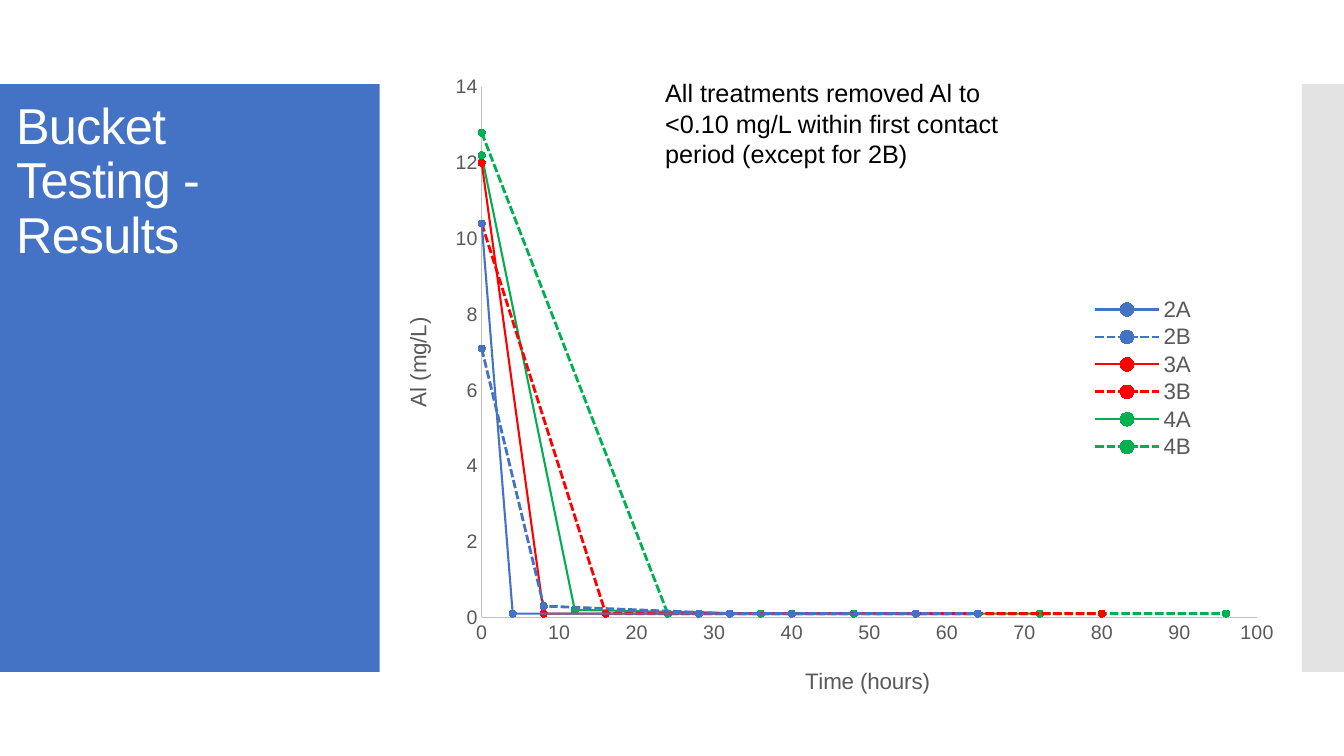
from dataclasses import dataclass

from lxml import etree
from pptx import Presentation, util as u
from pptx.chart.data import XyChartData
from pptx.dml.color import RGBColor
from pptx.enum import chart as ch, dml, shapes
from pptx.oxml.ns import qn


@dataclass(frozen=True)
class Theme:
    """Hold the colours, font and type sizes of the slide."""
    blue: str = "4472C4"
    red: str = "FF0000"
    green: str = "00B050"
    gray: str = "C8C8C8"
    axis: str = "BFBFBF"
    label: str = "595959"
    white: str = "FFFFFF"
    black: str = "000000"
    font: str = "Arial"
    head: int = 36
    note: int = 18
    name: int = 16
    tick: int = 14


T = Theme()
COLS, ROWS = 160, 90
WIDE, HIGH = u.Inches(13.33), u.Inches(7.5)
RUNS = [
    ("2A", T.blue, False, [0, 4, 28, 32, 56], [10.4, 0.1, 0.1, 0.1, 0.1]),
    ("2B", T.blue, True, [0, 8, 32, 40, 64], [7.1, 0.3, 0.1, 0.1, 0.1]),
    ("3A", T.red, False, [0, 8, 32, 40, 64], [12, 0.1, 0.1, 0.1, 0.1]),
    ("3B", T.red, True, [0, 16, 40, 56, 80], [10.4, 0.1, 0.1, 0.1, 0.1]),
    ("4A", T.green, False, [0, 12, 36, 48, 72], [12.2, 0.2, 0.1, 0.1, 0.1]),
    ("4B", T.green, True, [0, 24, 48, 72, 96], [12.8, 0.1, 0.1, 0.1, 0.1]),
]


def grid(col, row, cols, rows):
    """Turn columns and rows into slide lengths."""
    return (int(WIDE * col / COLS), int(HIGH * row / ROWS),
            int(WIDE * cols / COLS), int(HIGH * rows / ROWS))


def paint(fill, color):
    """Give a fill one solid colour."""
    fill.solid()
    fill.fore_color.rgb = RGBColor.from_string(color)


def style(font, size, color):
    """Set the face, size and colour of a font."""
    font.name, font.size, font.bold = T.font, u.Pt(size), False
    font.color.rgb = RGBColor.from_string(color)


def panel(slide, box, color, alpha=None):
    """Add a plain rectangle, see-through if alpha is given."""
    rect = slide.shapes.add_shape(shapes.MSO_SHAPE.RECTANGLE, *grid(*box))
    rect.shadow.inherit = False
    rect.line.fill.background()
    paint(rect.fill, color)
    if alpha:
        tint = rect._element.spPr.find(".//" + qn("a:srgbClr"))
        etree.SubElement(tint, qn("a:alpha"), val=str(alpha * 1000))


def write(slide, box, words, size, color, lead=None, space=None):
    """Add a wrapped text box with one format."""
    frame = slide.shapes.add_textbox(*grid(*box)).text_frame
    frame.word_wrap = True
    para = frame.paragraphs[0]
    para.line_spacing = lead
    run = para.add_run()
    run.text = words
    style(run.font, size, color)
    if space:
        run.font._element.set("spc", str(space))


def place(node, inner=False, **spots):
    """Fix a chart part at shares of the chart's size."""
    frame = node.find(qn("c:layout"))
    if frame is None:
        frame = etree.Element(qn("c:layout"))
        over = node.find(qn("c:overlay"))
        node.insert(0 if over is None else node.index(over), frame)
    lay = etree.SubElement(frame, qn("c:manualLayout"))
    if inner:
        etree.SubElement(lay, qn("c:layoutTarget"), val="inner")
    for key in "xy":
        etree.SubElement(lay, qn(f"c:{key}Mode"), val="edge")
    for key, share in spots.items():
        etree.SubElement(lay, qn(f"c:{key}"), val=str(share))


def scale(axis, words, top, step, x, y, turn=0):
    """Style a value axis and its title."""
    axis.minimum_scale, axis.maximum_scale, axis.major_unit = 0, top, step
    axis.has_major_gridlines = False
    axis.major_tick_mark = axis.minor_tick_mark = ch.XL_TICK_MARK.NONE
    axis.tick_labels.number_format = "0"
    axis.tick_labels.number_format_is_linked = False
    style(axis.tick_labels.font, T.tick, T.label)
    paint(axis.format.line.fill, T.axis)
    axis.format.line.width = u.Pt(0.75)
    frame = axis.axis_title.text_frame
    frame.text = words
    style(frame.paragraphs[0].runs[0].font, T.name, T.label)
    frame._txBody.bodyPr.set("rot", str(turn * 60000))
    place(axis.axis_title._element, x=x, y=y)


def trace(line, color, dash):
    """Style one series with its line and round markers."""
    line.smooth = False
    paint(line.format.line.fill, color)
    line.format.line.width = u.Pt(2 if dash else 1.5)
    if dash:
        line.format.line.dash_style = dml.MSO_LINE.SQUARE_DOT
    mark = line.marker
    mark.style, mark.size = ch.XL_MARKER_STYLE.CIRCLE, 5
    paint(mark.format.fill, color)
    paint(mark.format.line.fill, color)


def graph(slide, box):
    """Add the scatter chart of aluminium over time."""
    data = XyChartData()
    for name, _, _, hours, levels in RUNS:
        line = data.add_series(name)
        for hour, level in zip(hours, levels):
            line.add_data_point(hour, level)
    kind = ch.XL_CHART_TYPE.XY_SCATTER_LINES
    plot = slide.shapes.add_chart(kind, *grid(*box), data).chart
    style(plot.font, 10, T.black)
    plot.has_title = False
    plot.plots[0].vary_by_categories = False
    for line, (_, color, dash, _, _) in zip(plot.plots[0].series, RUNS):
        trace(line, color, dash)
    scale(plot.category_axis, "Time (hours)", 100, 10, 0.46, 0.93)
    scale(plot.value_axis, "Al (mg/L)", 14, 2, 0.02, 0.39, turn=-90)
    plot.has_legend = True
    key = plot.legend
    key.position = ch.XL_LEGEND_POSITION.RIGHT
    key.include_in_layout = True
    style(key.font, T.name, T.label)
    place(key._element, x=0.77, y=0.36, w=0.13, h=0.26)
    area = plot._chartSpace.find(".//" + qn("c:plotArea"))
    place(area, inner=True, x=0.11, y=0.04, w=0.85, h=0.82)


def main():
    """Build the slide and save it."""
    deck = Presentation()
    deck.slide_width, deck.slide_height = WIDE, HIGH
    slide = deck.slides.add_slide(deck.slide_layouts[6])
    panel(slide, (0, 10, 45.2, 70), T.blue)
    panel(slide, (155, 10, 5, 70), T.gray, alpha=50)
    write(slide, (0.75, 11.4, 38.6, 60.4), "Bucket Testing - Results",
          T.head, T.white, lead=0.9, space=-60)
    graph(slide, (45.4, 7.3, 108.6, 77))
    write(slide, (78, 8.65, 42.6, 12.1),
          "All treatments removed Al to <0.10 mg/L within first contact "
          "period (except for 2B)", T.note, T.black)
    deck.save("out.pptx")


if __name__ == "__main__":
    main()
